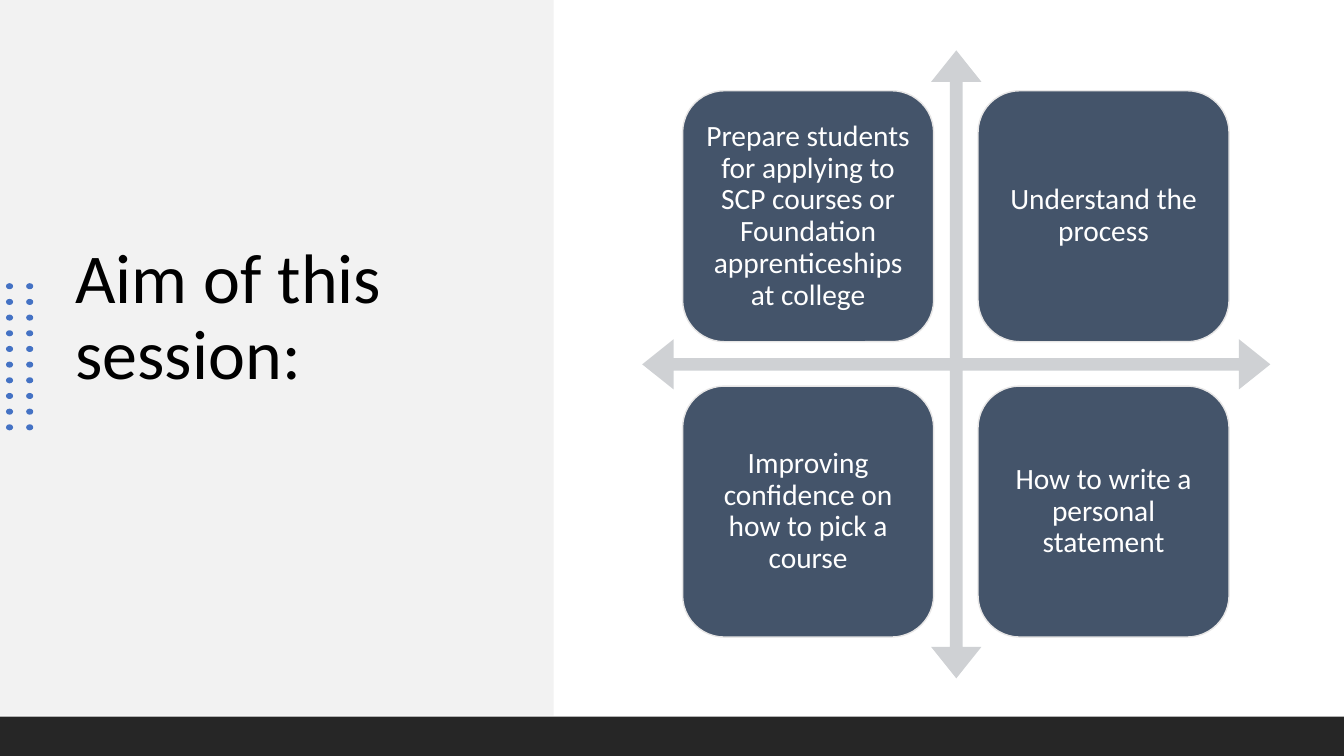
"""Build the session aims slide: a title panel beside a four-way arrow with four tiles."""
from dataclasses import dataclass

import pptx
import pptx.dml.color
import pptx.enum.shapes
import pptx.enum.text
import pptx.util

Inches = pptx.util.Inches
RGBColor = pptx.dml.color.RGBColor
MSO_SHAPE = pptx.enum.shapes.MSO_SHAPE
PP_ALIGN = pptx.enum.text.PP_ALIGN

BLACK = RGBColor(0x00, 0x00, 0x00)
WHITE = RGBColor(0xFF, 0xFF, 0xFF)
PANEL = RGBColor(0xF2, 0xF2, 0xF2)
FOOTER = RGBColor(0x26, 0x26, 0x26)
DOT = RGBColor(0x44, 0x72, 0xC4)
ARROW = RGBColor(0xCF, 0xD1, 0xD4)
TILE = RGBColor(0x44, 0x54, 0x6A)
TILE_LINE = RGBColor(0xE7, 0xE6, 0xE6)

DOT_ROWS = 10
DOT_PITCH = 1.4 / (DOT_ROWS - 1)
TILE_SIZE = 2.49
TILE_PITCH = 2.93


@dataclass(frozen=True)
class Aim:
    text: str
    col: int
    row: int


AIMS = [
    Aim("Prepare students for applying to SCP courses or Foundation apprenticeships at college", 0, 0),
    Aim("Understand the process", 1, 0),
    Aim("Improving confidence on how to pick a course", 0, 1),
    Aim("How to write a personal statement", 1, 1),
]


def add_shape(s, kind, left: float, top: float, width: float, height: float, fill: RGBColor, line: RGBColor | None = None):
    sp = s.shapes.add_shape(kind, Inches(left), Inches(top), Inches(width), Inches(height))
    sp.shadow.inherit = False
    sp.fill.solid()
    sp.fill.fore_color.rgb = fill
    if line is None:
        sp.line.fill.background()
    else:
        sp.line.color.rgb = line
        sp.line.width = pptx.util.Pt(1)
    return sp


def set_text(sp, text: str, *, size: float, color: RGBColor, align=PP_ALIGN.LEFT,
             side: float = 0.1, top: float = 0.05, bottom: float = 0.05) -> None:
    tf = sp.text_frame
    tf.word_wrap = True
    tf.vertical_anchor = pptx.enum.text.MSO_ANCHOR.MIDDLE
    tf.margin_left = tf.margin_right = Inches(side)
    tf.margin_top = Inches(top)
    tf.margin_bottom = Inches(bottom)
    p = tf.paragraphs[0]
    p.alignment = align
    p.line_spacing = 0.9
    r = p.add_run()
    r.text = text
    r.font.name = "Calibri"
    r.font.size = pptx.util.Pt(size)
    r.font.color.rgb = color


def add_dots(s) -> None:
    for row in range(DOT_ROWS):
        for left in (0.06, 0.26):
            add_shape(s, MSO_SHAPE.OVAL, left, 2.81 + row * DOT_PITCH, 0.07, 0.06, DOT)


def add_aim(s, aim: Aim) -> None:
    sp = add_shape(s, MSO_SHAPE.ROUNDED_RECTANGLE, 6.77 + aim.col * TILE_PITCH, 0.9 + aim.row * TILE_PITCH,
                   TILE_SIZE, TILE_SIZE, TILE, TILE_LINE)
    set_text(sp, aim.text, size=21, color=WHITE, align=PP_ALIGN.CENTER, side=0.09, top=0.09, bottom=0.09)


def main() -> None:
    prs = pptx.Presentation()
    prs.slide_width, prs.slide_height = Inches(13.33), Inches(7.5)
    s = prs.slides.add_slide(prs.slide_layouts[6])

    add_shape(s, MSO_SHAPE.RECTANGLE, 0, 0, 5.49, 7.1, PANEL)
    title = s.shapes.add_textbox(Inches(0.65), Inches(1.32), Inches(4.24), Inches(4.45))
    set_text(title, "Aim of this session:", size=50, color=BLACK, bottom=0.81)
    add_dots(s)
    add_shape(s, MSO_SHAPE.RECTANGLE, 0, 7.11, 13.33, 0.39, FOOTER)

    arrow = add_shape(s, MSO_SHAPE.QUAD_ARROW, 6.37, 0.5, 6.23, 6.23, ARROW)
    for i, value in enumerate((0.02, 0.04, 0.05)):
        arrow.adjustments[i] = value
    for aim in AIMS:
        add_aim(s, aim)

    prs.save("out.pptx")


if __name__ == "__main__":
    main()
